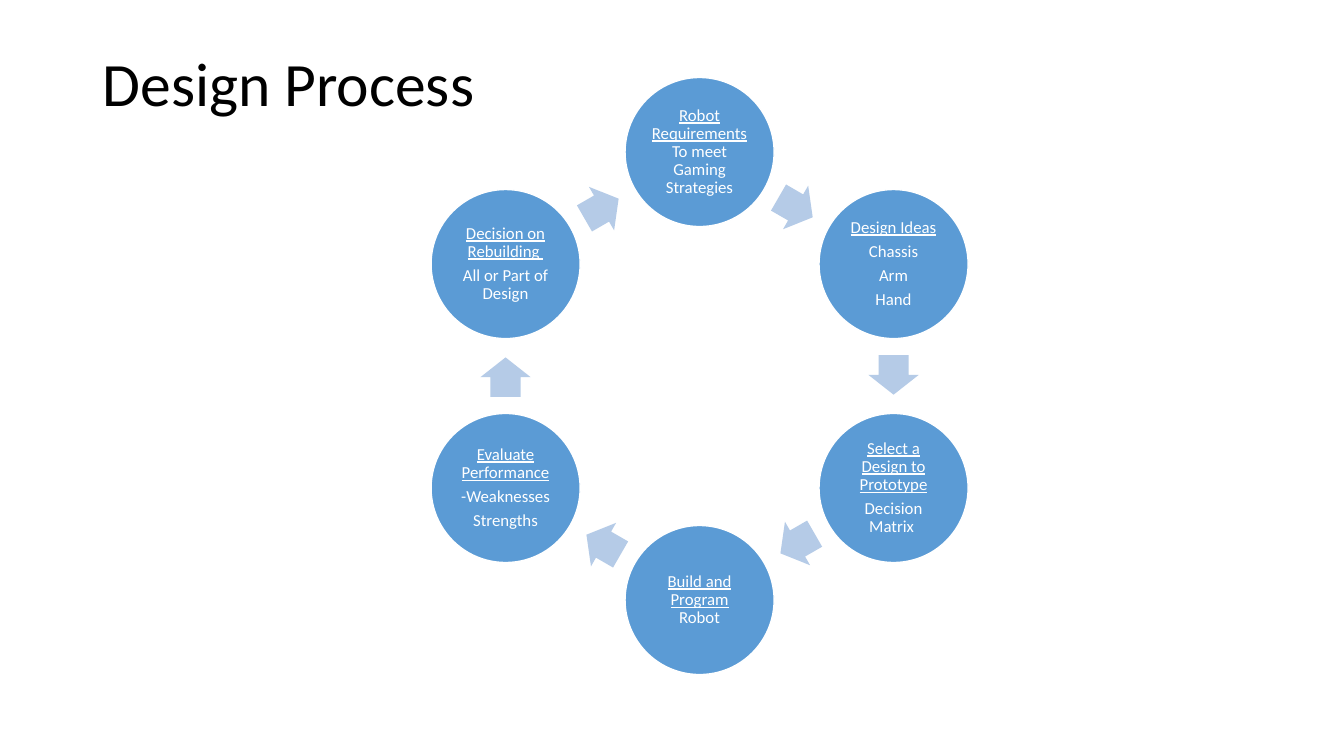
"""Build the Design Process slide: six stages in a ring, joined by arrows."""
from dataclasses import dataclass
from math import cos, pi, radians, sin

from pptx import Presentation
from pptx.dml.color import RGBColor as Rgb
from pptx.enum.shapes import MSO_SHAPE as Form
from pptx.enum.text import MSO_ANCHOR as Anchor, MSO_AUTO_SIZE as Fit, PP_ALIGN as Align
from pptx.shapes.autoshape import Shape
from pptx.shapes.group import GroupShape as Group
from pptx.text.text import TextFrame as Frame
from pptx.util import Pt


@dataclass(frozen=True)
class Theme:
    face: str = "Calibri"
    ink: Rgb = Rgb(0, 0, 0)
    white: Rgb = Rgb(255, 255, 255)
    disc: Rgb = Rgb(0x5B, 0x9B, 0xD5)
    arrow: Rgb = Rgb(0xB5, 0xCB, 0xE7)
    title: float = 44
    body: float = 12


@dataclass(frozen=True)
class Stage:
    head: str
    tail: str = ""
    items: tuple[str, ...] = ()


@dataclass(frozen=True)
class Ring:
    x: float = 499.7
    y: float = 268.6
    radius: float = 160
    disc: float = 106.5
    long: float = 28.2
    wide: float = 35.9
    back: float = 0.8


THEME = Theme()
RING = Ring()
STAGES = (
    Stage("Robot Requirements ", tail="To meet Gaming Strategies"),
    Stage("Design Ideas", items=("Chassis", "Arm", "Hand")),
    Stage("Select a Design to Prototype", items=("Decision Matrix ",)),
    Stage("Build and Program ", tail="Robot"),
    Stage("Evaluate Performance", items=("-Weaknesses", "Strengths")),
    Stage("Decision on Rebuilding ", items=("All or Part of Design",)),
)


def write(frame: Frame, text: str, *, size: float, color: Rgb, align: Align = Align.LEFT,
          under: bool = False, after: float = 0, fresh: bool = True) -> None:
    """Write text as a new paragraph, or as a run in the last one."""
    para = frame.paragraphs[-1]
    if fresh and para.runs:
        para = frame.add_paragraph()
    para.alignment = align
    para.line_spacing = 0.9
    para.space_after = Pt(after)
    run = para.add_run()
    run.text = text
    font = run.font
    font.name, font.size, font.underline = THEME.face, Pt(size), under
    font.color.rgb = color


def place(group: Group, form: Form, x: float, y: float, wide: float, high: float,
          fill: Rgb) -> Shape:
    """Add a flat shape centred on a point."""
    shape = group.shapes.add_shape(form, Pt(x - wide / 2), Pt(y - high / 2), Pt(wide), Pt(high))
    shape.shadow.inherit = False
    shape.fill.solid()
    shape.fill.fore_color.rgb = fill
    return shape


def draw_stage(group: Group, stage: Stage, angle: float) -> None:
    """Draw one stage as a disc with its text."""
    disc = place(group, Form.OVAL, RING.x + RING.radius * sin(angle),
                 RING.y - RING.radius * cos(angle), RING.disc, RING.disc, THEME.disc)
    disc.line.color.rgb = THEME.white
    disc.line.width = Pt(1)
    frame = disc.text_frame
    frame.word_wrap = True
    frame.vertical_anchor = Anchor.MIDDLE
    frame.margin_left = frame.margin_right = frame.margin_top = frame.margin_bottom = Pt(1.2)
    look = dict(size=THEME.body, color=THEME.white, align=Align.CENTER, after=4.2)
    write(frame, stage.head, under=True, **look)
    if stage.tail:
        write(frame, stage.tail, fresh=False, **look)
    for item in stage.items:
        write(frame, item, **look)


def draw_arrow(group: Group, angle: float, turn: float) -> None:
    """Draw the arrow midway between two stages, pointing clockwise."""
    reach = RING.radius * cos(pi / len(STAGES))
    x = RING.x + reach * sin(angle) - RING.back * cos(angle)
    y = RING.y - reach * cos(angle) - RING.back * sin(angle)
    arrow = place(group, Form.RIGHT_ARROW, x, y, RING.long, RING.wide, THEME.arrow)
    arrow.adjustments[0], arrow.adjustments[1] = 0.6, 0.5
    arrow.rotation = turn
    arrow.line.fill.background()


def main() -> None:
    """Build and save the slide."""
    deck = Presentation()
    deck.slide_width, deck.slide_height = Pt(960), Pt(540)
    slide = deck.slides.add_slide(deck.slide_layouts[5])
    title = slide.shapes.title
    title.left, title.top, title.width, title.height = Pt(66.2), Pt(28.8), Pt(360), Pt(65.5)
    frame = title.text_frame
    frame.auto_size = Fit.NONE
    frame.vertical_anchor = Anchor.MIDDLE
    write(frame, "Design Process", size=THEME.title, color=THEME.ink)
    group = slide.shapes.add_group_shape()
    step = 360 / len(STAGES)
    for order, stage in enumerate(STAGES):
        turn = order * step
        draw_stage(group, stage, radians(turn))
        draw_arrow(group, radians(turn + step / 2), turn + step / 2)
    deck.save("out.pptx")


if __name__ == "__main__":
    main()
